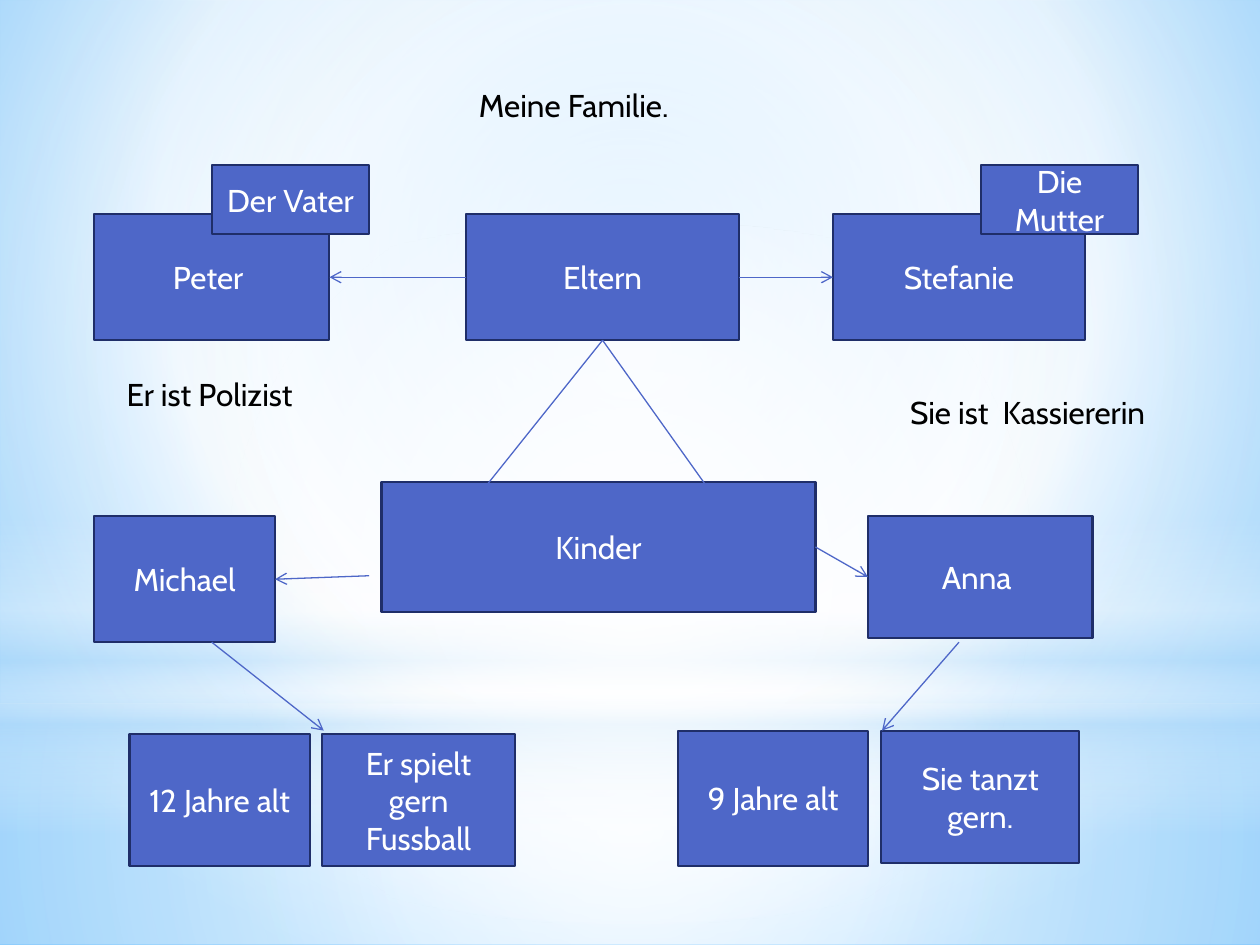
from lxml.etree import SubElement
from pptx import Presentation
from pptx.dml.color import RGBColor as RGB
from pptx.enum.shapes import MSO_CONNECTOR as LINE, MSO_SHAPE as SHAPE
from pptx.enum.text import MSO_ANCHOR as ANCHOR, MSO_AUTO_SIZE as FIT, PP_ALIGN as ALIGN
from pptx.oxml.ns import qn
from pptx.util import Pt

BLUE = RGB(0x4E, 0x67, 0xC8)
NAVY = RGB(0x1F, 0x2E, 0x69)
WHITE = RGB(0xFF, 0xFF, 0xFF)
BLACK = RGB(0, 0, 0)
PALE = RGB(0xB4, 0xDC, 0xFA)
SKY = RGB(0x9E, 0xD5, 0xFF)
AZURE = RGB(0x5B, 0xB9, 0xFF)

TOP, LEFT, BOTTOM, RIGHT = range(4)
CENTRE = (50, 50, 50, 50)


def blend(fill, root, stops, focus=None):
    """Fill with (place, colour, opacity) stops, round a focus or else downwards."""
    fill.gradient()
    grad = next(root.iter(qn("a:gradFill")))
    for child in list(grad):
        grad.remove(child)
    grad.set("rotWithShape", "1")
    row = SubElement(grad, qn("a:gsLst"))
    for place, colour, alpha in stops:
        stop = SubElement(row, qn("a:gs"), pos=str(place * 1000))
        tint = SubElement(stop, qn("a:srgbClr"), val=str(colour))
        if alpha < 100:
            SubElement(tint, qn("a:alpha"), val=str(alpha * 1000))
    if focus:
        ring = SubElement(grad, qn("a:path"), path="circle")
        sides = {side: str(share * 1000) for side, share in zip("ltrb", focus)}
        SubElement(ring, qn("a:fillToRect"), **sides)
    else:
        SubElement(grad, qn("a:lin"), ang="5400000", scaled="0")


class Board:
    font = "Cabin"
    size = Pt(18)

    def __init__(self, slide):
        self.slide = slide
        self.shapes = slide.shapes

    def ground(self, stops, focus):
        blend(self.slide.background.fill, self.slide._element, stops, focus)

    def plain(self, kind, *place):
        shape = self.shapes.add_shape(kind, *map(Pt, place))
        shape.shadow.inherit = False
        return shape

    def glow(self, kind, top, height, stops, focus=None):
        shape = self.plain(kind, 0, top, 720, height)
        shape.line.fill.background()
        blend(shape.fill, shape._element, stops, focus)

    def letter(self, frame, text, colour, align):
        frame.text = text
        para = frame.paragraphs[0]
        para.alignment = align
        font = para.runs[0].font
        font.name, font.size, font.color.rgb = self.font, self.size, colour

    def box(self, text, *place):
        shape = self.plain(SHAPE.RECTANGLE, *place)
        shape.fill.solid()
        shape.fill.fore_color.rgb = BLUE
        shape.line.color.rgb = NAVY
        shape.line.width = Pt(1.25)
        shape.text_frame.vertical_anchor = ANCHOR.MIDDLE
        self.letter(shape.text_frame, text, WHITE, ALIGN.CENTER)
        return shape

    def label(self, shape, text, wrap):
        frame = shape.text_frame
        frame.word_wrap = wrap
        frame.auto_size = FIT.SHAPE_TO_FIT_TEXT
        frame.vertical_anchor = ANCHOR.TOP
        self.letter(frame, text, BLACK, ALIGN.LEFT)

    def note(self, text, *place):
        self.label(self.shapes.add_textbox(*map(Pt, place)), text, False)

    def title(self, text, *place):
        shape = self.shapes.title
        shape.left, shape.top, shape.width, shape.height = map(Pt, place)
        self.label(shape, text, True)
        self.shapes._spTree.append(shape._element)  # above the glows

    def arrow(self, start, end):
        """Each end is a point (x, y) or a joint (box, side)."""
        line = self.shapes.add_connector(LINE.STRAIGHT, 0, 0, 0, 0)
        if isinstance(start[0], (int, float)):
            line.begin_x, line.begin_y = map(Pt, start)
        else:
            line.begin_connect(*start)
        if isinstance(end[0], (int, float)):
            line.end_x, line.end_y = map(Pt, end)
        else:
            line.end_connect(*end)
        line.line.color.rgb = BLUE
        line.line.width = Pt(0.75)
        SubElement(line.line._get_or_add_ln(), qn("a:tailEnd"), type="arrow")
        SubElement(line._element.spPr, qn("a:effectLst"))


def main():
    deck = Presentation()
    deck.slide_width, deck.slide_height = Pt(720), Pt(540)
    board = Board(deck.slides.add_slide(deck.slide_layouts[5]))

    board.ground([(0, SKY, 100), (60, WHITE, 100), (100, AZURE, 100)], (20, 10, 20, 60))
    board.glow(SHAPE.RECTANGLE, 402, 138,
               [(0, WHITE, 91), (37, WHITE, 76), (100, PALE, 79)], CENTRE)
    board.glow(SHAPE.RECTANGLE, 0, 402,
               [(0, WHITE, 89), (48, WHITE, 62), (100, PALE, 79)], CENTRE)
    board.glow(SHAPE.RECTANGLE, 296.5, 180,
               [(0, WHITE, 0), (29, WHITE, 30), (45, PALE, 40),
                (55, WHITE, 26), (65, PALE, 60), (100, WHITE, 0)])
    board.glow(SHAPE.OVAL, 126, 402, [(0, WHITE, 100), (56, WHITE, 0)], CENTRE)

    board.title("Meine Familie.", 266.5, 45.5, 156, 29)

    parents = board.box("Eltern", 266.2, 122.4, 156.3, 72)
    peter = board.box("Peter ", 53.7, 122.4, 134.6, 72)
    stefanie = board.box("Stefanie", 476, 122.4, 144, 72)
    kids = board.box("Kinder", 218, 275.6, 248, 74)
    michael = board.box("Michael", 53.7, 295, 103.5, 72)
    anna = board.box("Anna ", 496, 295, 128.3, 69.5)
    board.box("12 Jahre alt", 74, 419.6, 103, 75.4)
    board.box("Er spielt gern Fussball", 184, 419.6, 110.4, 75.4)
    board.box("9 Jahre alt", 387.4, 417.5, 108.6, 77.4)
    board.box("Sie tanzt gern.", 503.7, 417.5, 113, 75.6)

    for x in (411, 269.5):
        board.arrow((parents, BOTTOM), (x, 288))
    board.arrow((parents, RIGHT), (stefanie, LEFT))
    board.arrow((parents, LEFT), (peter, RIGHT))
    board.arrow((211, 329), (michael, RIGHT))
    board.arrow((kids, RIGHT), (anna, LEFT))
    board.arrow((548, 367), (504, 417.5))
    board.arrow((121, 367), (185, 417.5))

    board.note("Er ist Polizist", 65.3, 211, 119.5, 29)
    board.note("Sie ist  Kassiererin", 513, 221, 163.4, 29)

    board.box("Der Vater", 121, 94.3, 90, 39.6)
    board.box("Die Mutter", 560.7, 94.3, 89.5, 39.6)

    deck.save("out.pptx")


if __name__ == "__main__":
    main()
